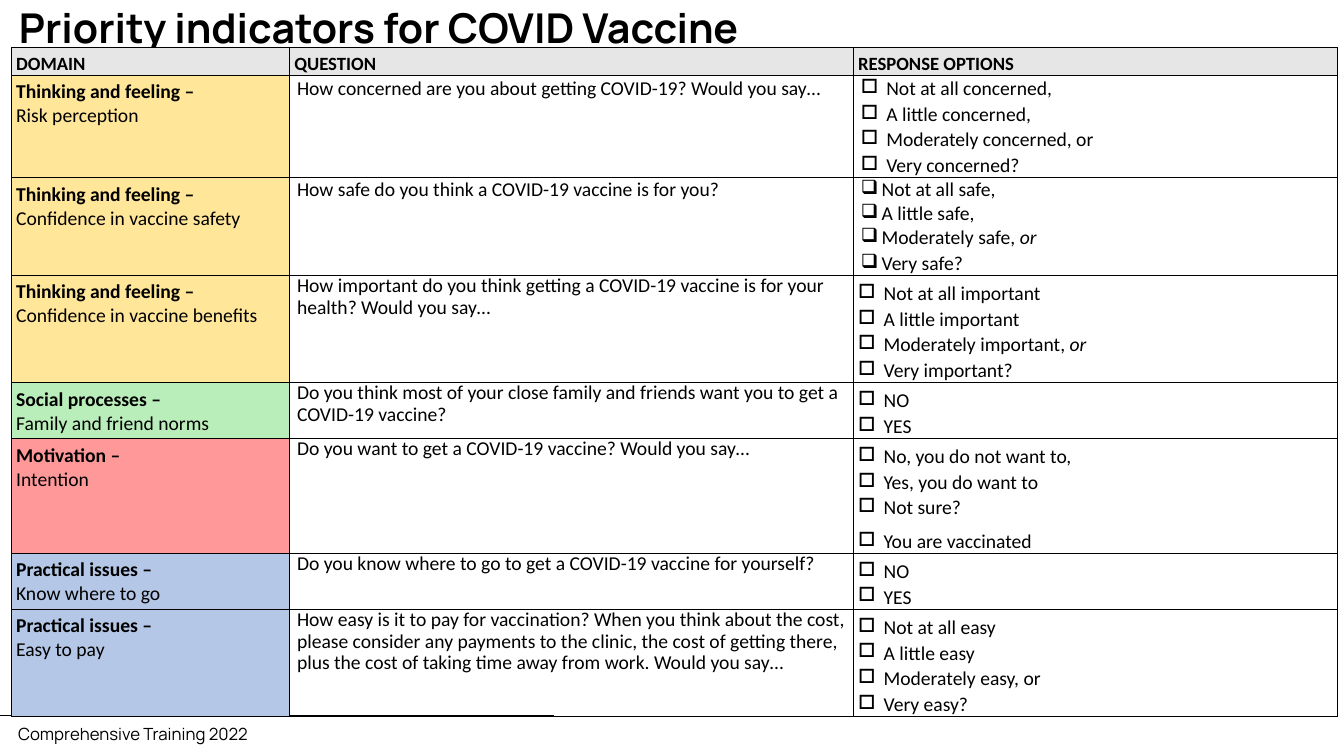
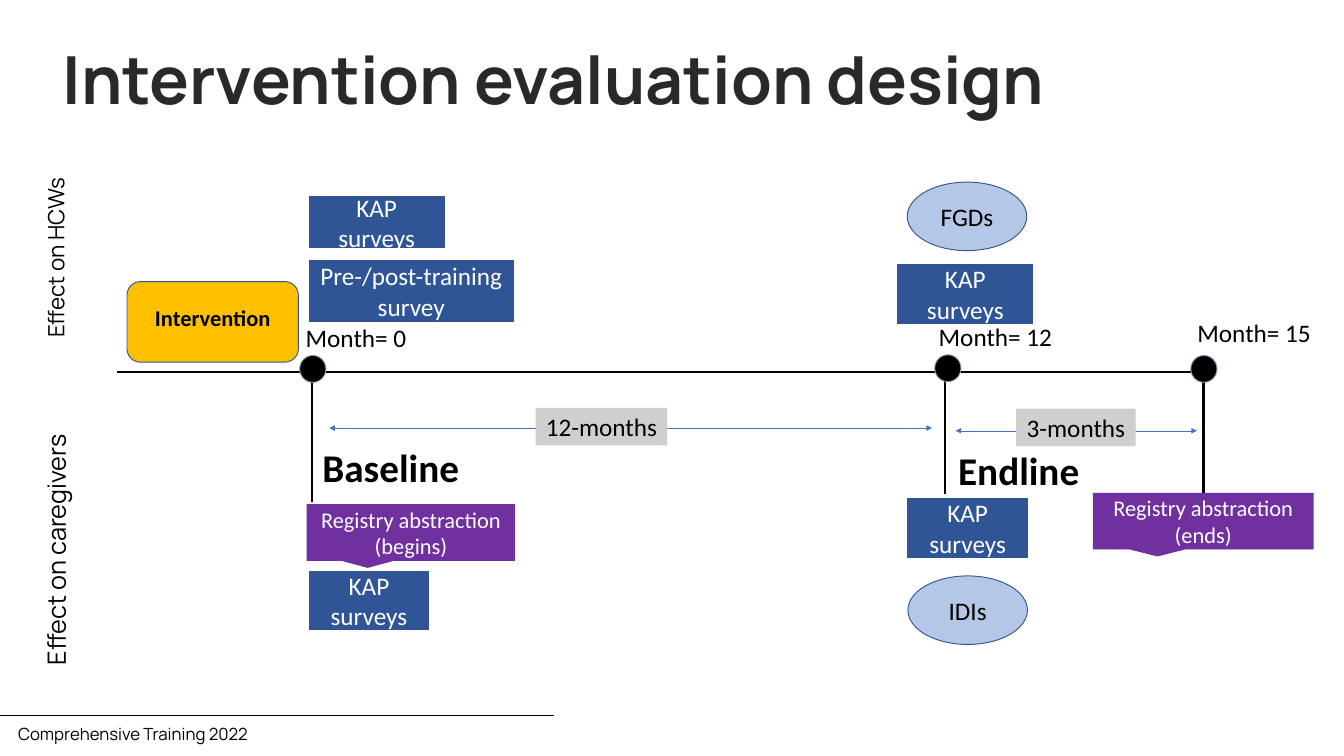
from dataclasses import dataclass
from typing import NamedTuple

from lxml import etree
from pptx import Presentation
from pptx.dml.color import RGBColor
from pptx.enum.shapes import MSO_CONNECTOR, MSO_SHAPE
from pptx.enum.text import MSO_ANCHOR, MSO_AUTO_SIZE, PP_ALIGN
from pptx.oxml.ns import qn
from pptx.util import Emu, Inches, Pt

LEFT, CENTER = PP_ALIGN.LEFT, PP_ALIGN.CENTER
TOP, MIDDLE = MSO_ANCHOR.TOP, MSO_ANCHOR.MIDDLE
RECTANGLE, ROUNDED = MSO_SHAPE.RECTANGLE, MSO_SHAPE.ROUNDED_RECTANGLE
OVAL, CALLOUT = MSO_SHAPE.OVAL, MSO_SHAPE.RECTANGULAR_CALLOUT
STRAIGHT = MSO_CONNECTOR.STRAIGHT

# Shared look
HEADING_FONT, BODY_FONT = "Manrope", "Calibri"
BLACK, WHITE, CHARCOAL = "000000", "FFFFFF", "292929"
GREY, SILVER = "E7E6E6", "D0CECE"
YELLOW, GREEN, RED, PALE_BLUE = "FFE699", "B9EDB9", "FF9999", "B4C7E6"
NAVY, OUTLINE, SKY, ARROW_BLUE = "2F5597", "325491", "B4C7E7", "4472C4"
PURPLE, AMBER, DOT_EDGE = "7030A0", "FFC000", "8497B0"

# Slide grid
SLIDE_WIDTH, SLIDE_HEIGHT = Inches(20), Inches(11.25)
COLUMN, ROW = SLIDE_WIDTH / 20, SLIDE_HEIGHT / 11.25


def columns(count: float) -> Emu:
    return Emu(round(count * COLUMN))


def rows(count: float) -> Emu:
    return Emu(round(count * ROW))


class Box(NamedTuple):
    left: float
    top: float
    width: float
    height: float

    def frame(self) -> tuple:
        return (columns(self.left), rows(self.top),
                columns(self.width), rows(self.height))


@dataclass
class Style:
    size: float
    color: str = BLACK
    bold: bool = False
    font: str = BODY_FONT
    align: PP_ALIGN = LEFT
    spacing: float = 1.0


@dataclass
class Node:
    """A filled shape on the evaluation timeline."""
    kind: MSO_SHAPE
    box: Box
    fill: str
    line: str = ""
    text: str = ""
    style: Style | None = None


@dataclass
class Caption:
    text: str
    box: Box
    style: Style
    rotation: int = 0


@dataclass
class Line:
    start: tuple
    end: tuple
    color: str = BLACK
    weight: float = 2.25
    arrows: bool = False


@dataclass
class Answers:
    """Response options; text after a bar is set in italics."""
    options: list
    bullet: str = "□"
    indent: float = 0.38
    spacing: float = 1.07
    spaced_from: int = -1
    loose: bool = False
    tab: float = 0


@dataclass
class Indicator:
    height: float
    fill: str
    domain: str
    topic: str
    question: str
    answers: Answers
    spacing: float = 0.9


def rgb(value: str) -> RGBColor:
    return RGBColor.from_string(value)


def format_paragraph(paragraph, style: Style) -> None:
    paragraph.alignment = style.align
    paragraph.line_spacing = style.spacing
    font = paragraph.font
    font.name, font.size, font.bold = style.font, Pt(style.size), style.bold
    font.color.rgb = rgb(style.color)


def write(frame, text: str, style: Style, anchor=TOP) -> None:
    frame.word_wrap = True
    frame.auto_size = MSO_AUTO_SIZE.NONE
    frame.vertical_anchor = anchor
    paragraph = frame.paragraphs[0]
    paragraph.text = text
    format_paragraph(paragraph, style)


def draw_caption(slide, caption: Caption) -> None:
    shape = slide.shapes.add_textbox(*caption.box.frame())
    shape.rotation = caption.rotation
    write(shape.text_frame, caption.text, caption.style)


def draw_node(slide, node: Node) -> None:
    shape = slide.shapes.add_shape(node.kind, *node.box.frame())
    shape.shadow.inherit = False
    shape.fill.solid()
    shape.fill.fore_color.rgb = rgb(node.fill)
    if node.line:
        shape.line.color.rgb = rgb(node.line)
        shape.line.width = Pt(1)
    else:
        shape.line.fill.background()
    if node.style:
        write(shape.text_frame, node.text, node.style, MIDDLE)


def draw_line(slide, line: Line) -> None:
    (x1, y1), (x2, y2) = line.start, line.end
    connector = slide.shapes.add_connector(
        STRAIGHT, columns(x1), rows(y1), columns(x2), rows(y2))
    connector.line.color.rgb = rgb(line.color)
    connector.line.width = Pt(line.weight)
    properties = connector._element.spPr
    if line.arrows:
        for end in ("a:headEnd", "a:tailEnd"):
            etree.SubElement(properties.find(qn("a:ln")), qn(end), type="triangle")
    etree.SubElement(properties, qn("a:effectLst"))


def start_slide(presentation, title: str, box: Box, style: Style):
    """Adds a slide with its title and the common footer."""
    slide = presentation.slides.add_slide(presentation.slide_layouts[5])
    shape = slide.shapes.title
    shape.left, shape.top, shape.width, shape.height = box.frame()
    write(shape.text_frame, title, style, MIDDLE)
    draw_line(slide, Line((-0.08, 10.65), (8.25, 10.65), weight=0.5))
    draw_caption(slide, Caption("Comprehensive Training 2022", Box(0.17, 10.72, 6.58, 0.4),
                                Style(18, font=HEADING_FONT)))
    return slide


# Indicator table
TABLE_BOX = Box(0.17, 0.71, 19.73, 9.81)
TABLE_COLUMNS = (4.14, 8.39, 7.2)
HEADER_HEIGHT = 0.41
HEADERS = ("DOMAIN", "QUESTION", "RESPONSE OPTIONS")
HEADER_INSETS = (0.07, 0.07, 0.01, 0)
DOMAIN_INSETS = (0.07, 0.07, 0.15, 0)
QUESTION_INSETS = (0.11, 0, 0.11, 0)
FEELING, PRACTICAL = "Thinking and feeling –", "Practical issues –"

INDICATORS = [
    Indicator(1.5, YELLOW, FEELING, "Risk perception",
              "How concerned are you about getting COVID-19? Would you say…",
              Answers(["Not at all concerned,", "A little concerned,",
                       "Moderately concerned, or", "Very concerned?"],
                      loose=True, tab=0.25), 1.07),
    Indicator(1.4, YELLOW, FEELING, "Confidence in vaccine safety",
              "How safe do you think a COVID-19 vaccine is for you?",
              Answers(["Not at all safe,", "A little safe,", "Moderately safe, |or", "Very safe?"],
                      "❑", 0.31, 1.0, loose=True), 1.0),
    Indicator(1.58, YELLOW, FEELING, "Confidence in vaccine benefits",
              "How important do you think getting a COVID-19 vaccine is for your health? "
              "Would you say…",
              Answers(["Not at all important", "A little important",
                       "Moderately important, |or", "Very important?"])),
    Indicator(0.83, GREEN, "Social processes –", "Family and friend norms",
              "Do you think most of your close family and friends want you to get a "
              "COVID-19 vaccine?", Answers(["NO", "YES"])),
    Indicator(1.68, RED, "Motivation –", "Intention",
              "Do you want to get a COVID-19 vaccine? Would you say…",
              Answers(["No, you do not want to,", "Yes, you do want to",
                       "Not sure?", "You are vaccinated"], spaced_from=-2)),
    Indicator(0.83, PALE_BLUE, PRACTICAL, "Know where to go",
              "Do you know where to go to get a COVID-19 vaccine for yourself?",
              Answers(["NO", "YES"])),
    Indicator(1.58, PALE_BLUE, PRACTICAL, "Easy to pay",
              "How easy is it to pay for vaccination? When you think about the cost, please "
              "consider any payments to the clinic, the cost of getting there, plus the cost "
              "of taking time away from work. Would you say…",
              Answers(["Not at all easy", "A little easy", "Moderately easy, or", "Very easy?"])),
]


def prepare_cell(cell, insets: tuple, fill: str = "", anchor=TOP):
    """Sets insets, borders and fill; returns the text frame."""
    left, top, right, bottom = insets
    cell.margin_left, cell.margin_right = columns(left), columns(right)
    cell.margin_top, cell.margin_bottom = rows(top), rows(bottom)
    cell.vertical_anchor = anchor
    properties = cell._tc.get_or_add_tcPr()
    for side in ("a:lnL", "a:lnR", "a:lnT", "a:lnB"):
        border = etree.SubElement(properties, qn(side), w=str(Pt(1)))
        solid = etree.SubElement(border, qn("a:solidFill"))
        etree.SubElement(solid, qn("a:srgbClr"), val=BLACK)
    if fill:
        cell.fill.solid()
        cell.fill.fore_color.rgb = rgb(fill)
    else:
        cell.fill.background()
    return cell.text_frame


def write_answers(frame, answers: Answers) -> None:
    spaced = answers.options[answers.spaced_from:]
    for index, option in enumerate(answers.options):
        paragraph = frame.paragraphs[0] if index == 0 else frame.add_paragraph()
        plain, _, italic = option.partition("|")
        paragraph.add_run().text = plain
        if italic:
            run = paragraph.add_run()
            run.text, run.font.italic = italic, True
        properties = paragraph._p.get_or_add_pPr()
        properties.set("marL", str(columns(answers.indent)))
        properties.set("indent", str(-columns(answers.indent)))
        etree.SubElement(properties, qn("a:buChar"), char=answers.bullet)
        if answers.tab:
            tabs = etree.SubElement(properties, qn("a:tabLst"))
            etree.SubElement(tabs, qn("a:tab"), pos=str(columns(answers.tab)), algn="l")
        last = index == len(answers.options) - 1
        format_paragraph(paragraph, Style(21, spacing=1.07 if last else answers.spacing))
        if option in spaced and not answers.loose:
            paragraph.space_after = Pt(8)


def build_indicators(presentation) -> None:
    slide = start_slide(presentation, "Priority indicators for COVID Vaccine",
                        Box(0.18, 0.06, 17.23, 0.78), Style(44, BLACK, True, HEADING_FONT, spacing=0.9))
    table = slide.shapes.add_table(len(INDICATORS) + 1, len(HEADERS), *TABLE_BOX.frame()).table
    table.first_row = table.horz_banding = False
    for column, width in zip(table.columns, TABLE_COLUMNS):
        column.width = columns(width)
    table.rows[0].height = rows(HEADER_HEIGHT)
    for index, header in enumerate(HEADERS):
        frame = prepare_cell(table.cell(0, index), HEADER_INSETS, GREY, MIDDLE)
        frame.text = header
        format_paragraph(frame.paragraphs[0], Style(20, bold=True))
    for index, item in enumerate(INDICATORS, 1):
        table.rows[index].height = rows(item.height)
        domain = prepare_cell(table.cell(index, 0), DOMAIN_INSETS, item.fill)
        domain.text = f"{item.domain}\n{item.topic}"
        for paragraph, bold in zip(domain.paragraphs, (True, False)):
            format_paragraph(paragraph, Style(21, bold=bold))
        question = prepare_cell(table.cell(index, 1), QUESTION_INSETS)
        question.text = item.question
        format_paragraph(question.paragraphs[0], Style(21, spacing=item.spacing))
        insets = QUESTION_INSETS if item.answers.loose else DOMAIN_INSETS
        write_answers(prepare_cell(table.cell(index, 2), insets), item.answers)


# Evaluation timeline
LABEL = Style(27, align=CENTER)
SURVEY = Style(27, WHITE, align=CENTER)
REGISTRY = Style(24, WHITE, align=CENTER)
MONTH, PHASE = Style(27), Style(42, bold=True)

LINES = [Line((4.9, 6.37), (13.87, 6.37), ARROW_BLUE, 0.5, True),
         Line((14.22, 6.41), (17.81, 6.41), ARROW_BLUE, 0.5, True),
         Line((1.74, 5.54), (18.03, 5.54)),
         Line((4.64, 5.52), (4.64, 7.47)),
         Line((14.06, 5.48), (14.06, 7.35)),
         Line((17.91, 5.49), (17.91, 7.61))]
DOTS = [Node(OVAL, Box(left, top, 0.39, 0.4), BLACK, DOT_EDGE)
        for left, top in ((4.46, 5.29), (13.91, 5.28), (17.72, 5.29))]
SPANS = [Node(RECTANGLE, box, SILVER, "", text, LABEL) for text, box in (
    ("12-months", Box(7.97, 6.07, 1.96, 0.56)), ("3-months", Box(15.12, 6.08, 1.78, 0.56)))]
SURVEYS = [Node(RECTANGLE, box, NAVY, OUTLINE, text, SURVEY) for text, box in (
    ("KAP surveys", Box(4.6, 2.93, 2.01, 0.76)),
    ("Pre-/post-training survey", Box(4.6, 3.88, 3.04, 0.9)),
    ("KAP surveys", Box(4.6, 8.5, 1.78, 0.87)),
    ("KAP surveys", Box(13.36, 3.93, 2.01, 0.89)),
    ("KAP surveys", Box(13.51, 7.42, 1.78, 0.87)))]
INTERVIEWS = [Node(OVAL, Box(left, top, 1.78, 1.02), SKY, OUTLINE, text, LABEL)
              for text, left, top in (("IDIs", 13.51, 8.57), ("FGDs", 13.5, 2.71))]
REGISTRIES = [Node(CALLOUT, box, PURPLE, PURPLE, text, REGISTRY) for text, box in (
    ("Registry abstraction (begins)", Box(4.57, 7.51, 3.09, 0.83)),
    ("Registry abstraction (ends)", Box(16.27, 7.34, 3.27, 0.83)))]
INTERVENTION = Node(ROUNDED, Box(1.89, 4.19, 2.55, 1.2), AMBER, OUTLINE)
CAPTIONS = [
    Caption("Intervention", Box(2.06, 4.48, 2.21, 0.5), Style(24, bold=True, align=CENTER)),
    Caption("Baseline", Box(4.7, 6.54, 2.65, 0.81), PHASE),
    Caption("Endline", Box(13.97, 6.59, 2.38, 0.81), Style(42, bold=True, align=CENTER)),
    Caption("Effect on HCWs", Box(-0.61, 3.44, 2.87, 0.5), Style(24, font=HEADING_FONT), 270),
    Caption("Effect on caregivers", Box(-1.32, 7.56, 4.31, 0.56), Style(27, font=HEADING_FONT), 270),
    *(Caption(f"Month= {month}", Box(left, top, 2.01, 0.56), MONTH)
      for month, left, top in ((0, 4.45, 4.74), (12, 13.87, 4.73), (15, 17.72, 4.67)))]


def build_timeline(presentation) -> None:
    slide = start_slide(presentation, "Intervention evaluation design",
                        Box(0.83, 0.6, 17.25, 1.28), Style(71, CHARCOAL, True, HEADING_FONT, spacing=0.9))
    for line in LINES:
        draw_line(slide, line)
    for node in [*DOTS, *SPANS, INTERVENTION, *INTERVIEWS, *REGISTRIES, *SURVEYS]:
        draw_node(slide, node)
    for caption in CAPTIONS:
        draw_caption(slide, caption)


def main() -> None:
    presentation = Presentation()
    presentation.slide_width, presentation.slide_height = SLIDE_WIDTH, SLIDE_HEIGHT
    build_indicators(presentation)
    build_timeline(presentation)
    presentation.save("out.pptx")


if __name__ == "__main__":
    main()
